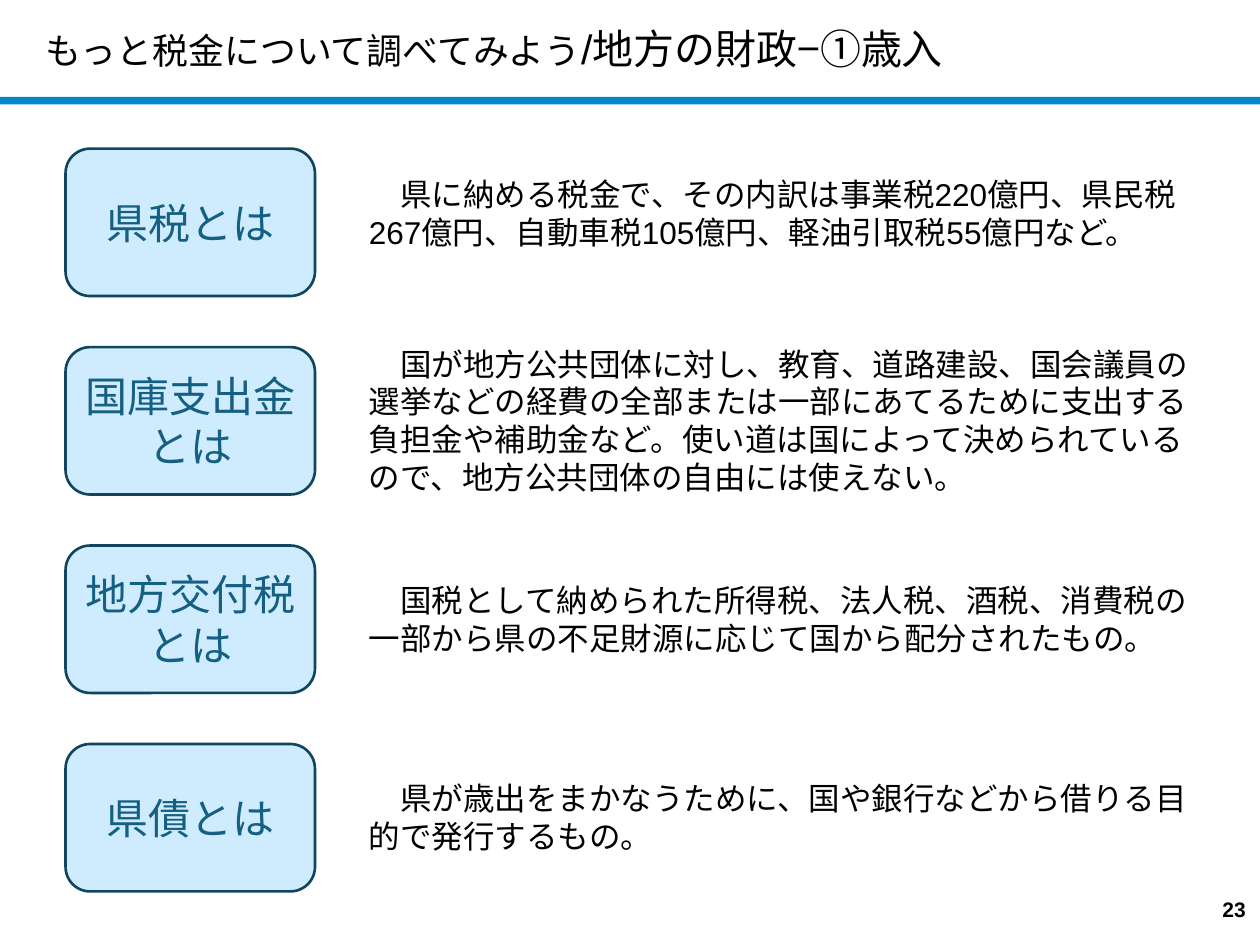
from pptx import Presentation
from pptx.dml.color import RGBColor
from pptx.enum.shapes import MSO_SHAPE
from pptx.enum.text import MSO_ANCHOR, PP_ALIGN
from pptx.util import Inches, Pt

RECT, ROUNDED = MSO_SHAPE.RECTANGLE, MSO_SHAPE.ROUNDED_RECTANGLE
TOP, MIDDLE = MSO_ANCHOR.TOP, MSO_ANCHOR.MIDDLE
LEFT, CENTER = PP_ALIGN.LEFT, PP_ALIGN.CENTER

# Content
TOPIC, SUBJECT = "もっと税金について調べてみよう", "/地方の財政−①歳入"
PAGE = "23"
# term, explanation, lines it fills, shift from the row's centre
REVENUES = [
    ("県税とは",
     "　県に納める税金で、その内訳は事業税220億円、県民税267億円、"
     "自動車税105億円、軽油引取税55億円など。", 2, -0.07),
    ("国庫支出金とは",
     "　国が地方公共団体に対し、教育、道路建設、国会議員の選挙などの経費の全部または一部に"
     "あてるために支出する負担金や補助金など。使い道は国によって決められているので、"
     "地方公共団体の自由には使えない。", 4, 0),
    ("地方交付税とは",
     "　国税として納められた所得税、法人税、酒税、消費税の一部から"
     "県の不足財源に応じて国から配分されたもの。", 2, 0),
    ("県債とは",
     "　県が歳出をまかなうために、国や銀行などから借りる目的で発行するもの。", 2, 0),
]

# Theme
THEME = {
    "font": "Arial",
    "band": RGBColor(0x00, 0x88, 0xCC),
    "card": RGBColor(0xCE, 0xEC, 0xFE),
    "edge": RGBColor(0x0F, 0x46, 0x5E),
    "term": {"size": Pt(24), "color": RGBColor(0x15, 0x60, 0x82)},
    "topic": {"size": Pt(20.5)},
    "subject": {"size": Pt(23.4)},
    "body": {"size": Pt(18)},
    "page": {"size": Pt(12), "bold": True},
}
BLACK = RGBColor(0, 0, 0)

# Grid, in inches
WIDTH, HEIGHT = 10, 7.5
FIRST_ROW, ROW_PITCH = 1.18, 1.575
CARD_LEFT, CARD_WIDTH, CARD_HEIGHT = 0.52, 1.98, 1.17
BODY_LEFT, BODY_WIDTH = 2.83, 6.84
LINE_HEIGHT, BODY_PADDING = 0.3, 0.11


def write(holder, runs, align=LEFT, anchor=MIDDLE):
    frame = holder.text_frame
    frame.word_wrap = True
    frame.vertical_anchor = anchor
    paragraph = frame.paragraphs[0]
    paragraph.alignment = align
    for text, style in runs:
        run = paragraph.add_run()
        run.text = text
        look = {"name": THEME["font"], "color": BLACK, **THEME[style]}
        run.font.color.rgb = look.pop("color")
        for attribute, value in look.items():
            setattr(run.font, attribute, value)


def add_box(slide, preset, area, fill):
    box = slide.shapes.add_shape(preset, *map(Inches, area))
    box.shadow.inherit = False
    box.fill.solid()
    box.fill.fore_color.rgb = fill
    return box


def add_text(slide, area, runs, **layout):
    write(slide.shapes.add_textbox(*map(Inches, area)), runs, **layout)


def main():
    deck = Presentation()
    deck.slide_width, deck.slide_height = Inches(WIDTH), Inches(HEIGHT)
    slide = deck.slides.add_slide(deck.slide_layouts[6])

    # Heading and the band beneath it
    band = add_box(slide, RECT, (0, 0.77, WIDTH, 0.06), THEME["band"])
    band.line.fill.background()
    add_text(slide, (0.26, -0.02, 8.5, 0.8),
             [(TOPIC, "topic"), (SUBJECT, "subject")])

    # One row per revenue source: term card, then explanation
    for row, (term, explanation, lines, shift) in enumerate(REVENUES):
        top = FIRST_ROW + row * ROW_PITCH
        card = add_box(slide, ROUNDED, (CARD_LEFT, top, CARD_WIDTH, CARD_HEIGHT),
                       THEME["card"])
        card.line.color.rgb = THEME["edge"]
        card.line.width = Pt(1.5)
        write(card, [(term, "term")], align=CENTER)

        body_height = lines * LINE_HEIGHT + BODY_PADDING
        body_top = top + (CARD_HEIGHT - body_height) / 2 + shift
        add_text(slide, (BODY_LEFT, body_top, BODY_WIDTH, body_height),
                 [(explanation, "body")], anchor=TOP)

    # Page number
    add_text(slide, (9.59, 7.05, 0.41, 0.33), [(PAGE, "page")], align=CENTER)

    deck.save("out.pptx")


if __name__ == "__main__":
    main()
